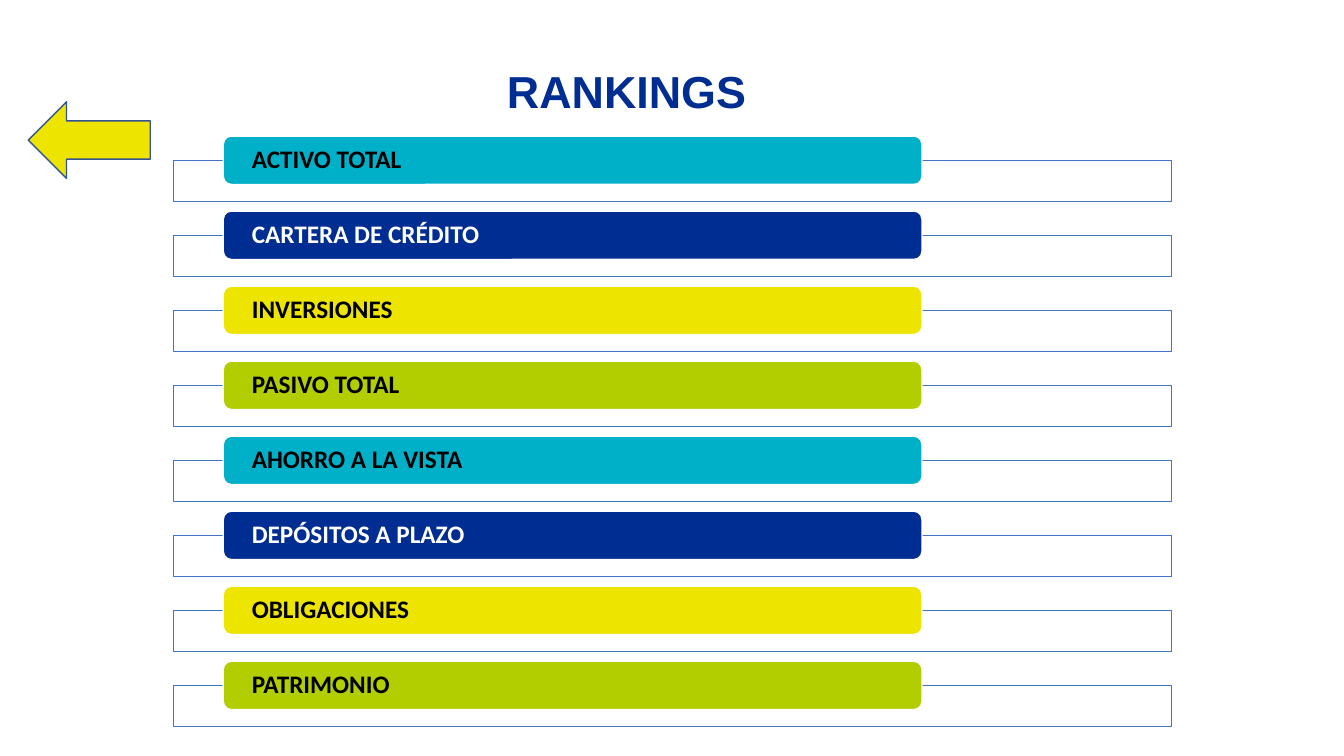
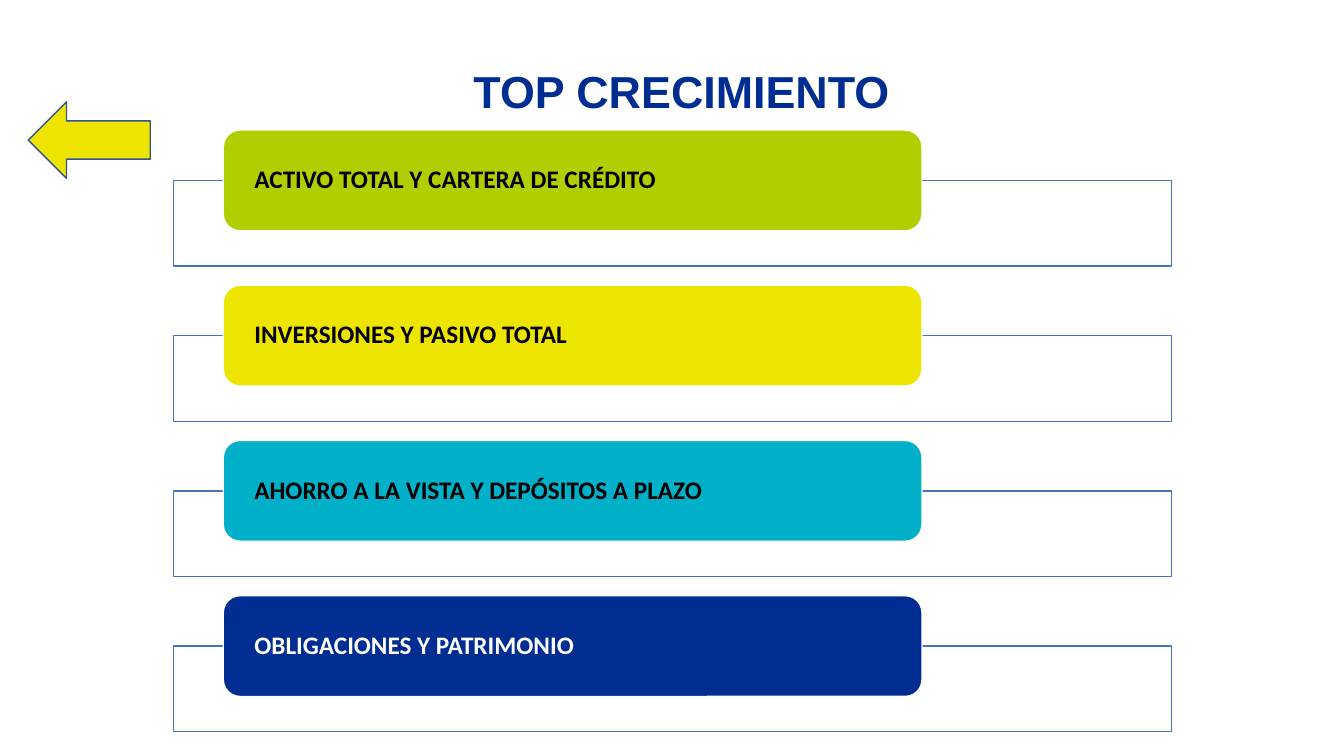
import pptx
import pptx.util
import pptx.dml.color
import pptx.enum.shapes
import pptx.enum.text

Inches = pptx.util.Inches
Pt = pptx.util.Pt
SHAPE = pptx.enum.shapes.MSO_SHAPE
ALIGN = pptx.enum.text.PP_ALIGN

COLORS = {
    "navy": "002D91",
    "cyan": "00AFC8",
    "yellow": "EDE400",
    "green": "B2CD00",
    "panel_line": "4472C4",
    "arrow_line": "325491",
    "white": "FFFFFF",
    "black": "000000",
}
TITLE_FONT = {"name": "Arial", "size": Pt(32), "bold": True}
LABEL_FONT = {"name": "Calibri", "size": Pt(18), "bold": True}
TITLE_FRAME = {"word_wrap": True, "vertical_anchor": pptx.enum.text.MSO_ANCHOR.MIDDLE}
LABEL_FRAME = {
    **TITLE_FRAME,
    "margin_left": Inches(0.26),
    "margin_right": Inches(0.26),
    "margin_top": 0,
    "margin_bottom": 0,
}

RANKINGS = [
    ("ACTIVO TOTAL", "cyan"),
    ("CARTERA DE CRÉDITO", "navy"),
    ("INVERSIONES", "yellow"),
    ("PASIVO TOTAL", "green"),
    ("AHORRO A LA VISTA", "cyan"),
    ("DEPÓSITOS A PLAZO", "navy"),
    ("OBLIGACIONES", "yellow"),
    ("PATRIMONIO", "green"),
]
GROWTH = [
    ("ACTIVO TOTAL Y CARTERA DE CRÉDITO", "green"),
    ("INVERSIONES Y PASIVO TOTAL", "yellow"),
    ("AHORRO A LA VISTA Y DEPÓSITOS A PLAZO", "cyan"),
    ("OBLIGACIONES Y PATRIMONIO", "navy"),
]


def rgb(name):
    return pptx.dml.color.RGBColor.from_string(COLORS[name])


def apply_format(target, values):
    for name, value in values.items():
        setattr(target, name, value)


def write_text(shape, text, color, font, frame_format, align):
    frame = shape.text_frame
    apply_format(frame, frame_format)
    para = frame.paragraphs[0]
    apply_format(para, {"alignment": align, "line_spacing": 0.9})
    span = para.add_run()
    span.text = text
    apply_format(span.font, font)
    span.font.color.rgb = rgb(color)


def add_block(page, kind, box, fill, line):
    block = page.shapes.add_shape(kind, *map(Inches, box))
    block.shadow.inherit = False
    block.fill.solid()
    block.fill.fore_color.rgb = rgb(fill)
    block.line.color.rgb = rgb(line)
    block.line.width = Pt(1)
    return block


def add_title(page, text, box, align):
    title = page.shapes.add_textbox(*map(Inches, box))
    write_text(title, text, "navy", TITLE_FONT, TITLE_FRAME, align)


def add_row(page, box, bar_height, label, color):
    left, top, width, height = box
    middle = bar_height / 2
    panel_box = (left, top + middle, width, height - middle)
    add_block(page, SHAPE.RECTANGLE, panel_box, "white", "panel_line")
    bar_box = (left + width * 0.05, top, width * 0.7, bar_height)
    bar = add_block(page, SHAPE.ROUNDED_RECTANGLE, bar_box, color, "white")
    text_color = "white" if color == "navy" else "black"
    write_text(bar, label, text_color, LABEL_FONT, LABEL_FRAME, ALIGN.LEFT)


def add_list(page, box, row_height, bar_height, items):
    left, top, width, height = box
    pitch = (height - row_height) / (len(items) - 1)
    for index, (label, color) in enumerate(items):
        row_box = (left, top + index * pitch, width, row_height)
        add_row(page, row_box, bar_height, label, color)


def add_menu_page(deck, title, title_box, title_align, list_box, row_height, bar_height, items):
    page = deck.slides.add_slide(deck.slide_layouts[6])
    add_title(page, title, title_box, title_align)
    add_list(page, list_box, row_height, bar_height, items)
    add_block(page, SHAPE.LEFT_ARROW, (0.28, 1.01, 1.21, 0.76), "yellow", "arrow_line")


def main():
    deck = pptx.Presentation()
    deck.slide_width = Inches(13.33)
    deck.slide_height = Inches(7.5)
    add_menu_page(deck, "RANKINGS", (4.93, 0.41, 2.63, 1.04), ALIGN.LEFT,
                  (1.72, 1.35, 9.9, 5.86), 0.65, 0.48, RANKINGS)
    add_menu_page(deck, "TOP CRECIMIENTO", (2.44, 0.41, 8.64, 1.04), ALIGN.CENTER,
                  (1.72, 1.29, 9.9, 5.97), 1.35, 1, GROWTH)
    deck.save("out.pptx")


if __name__ == "__main__":
    main()
